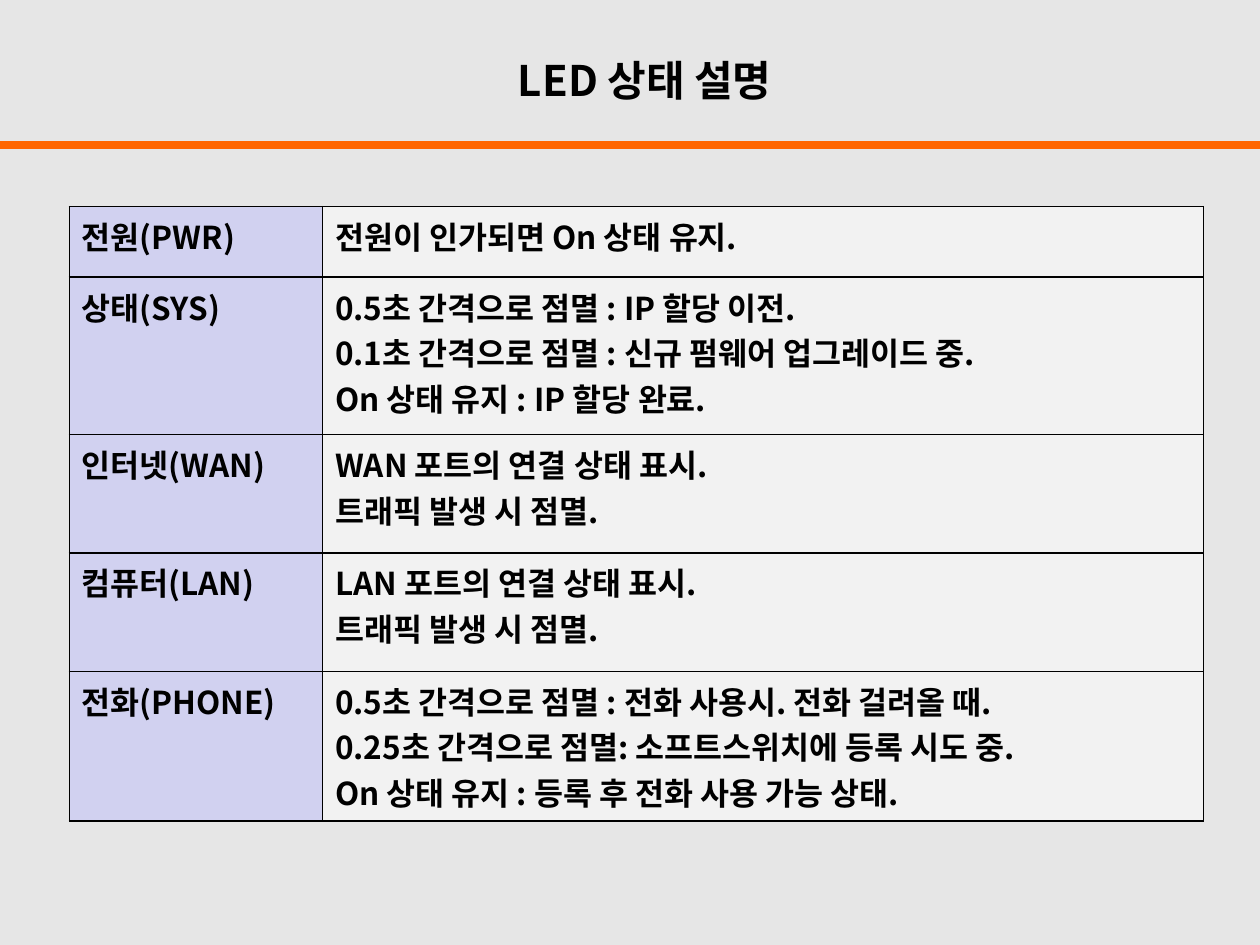
import dataclasses

import pptx
import pptx.dml.color
import pptx.enum.shapes
import pptx.enum.text
import pptx.oxml
import pptx.oxml.ns
import pptx.util

Inches = pptx.util.Inches
Pt = pptx.util.Pt


@dataclasses.dataclass(frozen=True)
class Theme:
    font: str = "Noto Sans CJK KR"
    background: str = "E6E6E6"
    accent: str = "FF6600"
    text: str = "000000"
    label_fill: str = "D1D1F0"
    detail_fill: str = "F2F2F2"
    border: str = "000000"
    title_size: float = 24
    body_size: float = 18
    rule_width: float = 4.5
    border_width: float = 1


@dataclasses.dataclass(frozen=True)
class LedState:
    label: str
    details: tuple[str, ...]
    height: float


THEME = Theme()
WIDTH, HEIGHT = 10, 7.5
COLUMNS = (2.01, 6.99)
STATES = (
    LedState("전원(PWR)", ("전원이 인가되면 On 상태 유지.",), 0.56),
    LedState("상태(SYS)", (
        "0.5초 간격으로 점멸 : IP 할당 이전.",
        "0.1초 간격으로 점멸 : 신규 펌웨어 업그레이드 중.",
        "On 상태 유지 : IP 할당 완료.",
    ), 1.25),
    LedState("인터넷(WAN)", ("WAN 포트의 연결 상태 표시.", "트래픽 발생 시 점멸."), 0.94),
    LedState("컴퓨터(LAN)", ("LAN 포트의 연결 상태 표시.", "트래픽 발생 시 점멸."), 0.94),
    LedState("전화(PHONE)", (
        "0.5초 간격으로 점멸 : 전화 사용시. 전화 걸려올 때.",
        "0.25초 간격으로 점멸: 소프트스위치에 등록 시도 중.",
        "On 상태 유지 : 등록 후 전화 사용 가능 상태.",
    ), 1.08),
)


def color(value: str) -> pptx.dml.color.RGBColor:
    return pptx.dml.color.RGBColor.from_string(value)


def write_text(text_frame, *lines: str, size: float = THEME.body_size,
               align=pptx.enum.text.PP_ALIGN.LEFT,
               anchor=pptx.enum.text.MSO_ANCHOR.TOP) -> None:
    text_frame.word_wrap = True
    text_frame.vertical_anchor = anchor
    for index, line in enumerate(lines):
        paragraph = text_frame.add_paragraph() if index else text_frame.paragraphs[0]
        paragraph.alignment = align
        paragraph.space_before = paragraph.space_after = Pt(0)
        run = paragraph.add_run()
        run.text = line
        run.font.name = THEME.font
        run.font.size = Pt(size)
        run.font.bold = True
        run.font.color.rgb = color(THEME.text)
        # The East Asian font carries the Korean letters
        east_asian = pptx.oxml.parse_xml(
            f'<a:ea {pptx.oxml.ns.nsdecls("a")} typeface="{THEME.font}"/>')
        run.font._element.find(pptx.oxml.ns.qn("a:latin")).addnext(east_asian)


def add_borders(cell) -> None:
    properties = cell._tc.get_or_add_tcPr()
    for index, side in enumerate(("lnL", "lnR", "lnT", "lnB")):
        properties.insert(index, pptx.oxml.parse_xml(
            f'<a:{side} {pptx.oxml.ns.nsdecls("a")} w="{Pt(THEME.border_width)}">'
            f'<a:solidFill><a:srgbClr val="{THEME.border}"/></a:solidFill></a:{side}>'))


def fill_cell(cell, *lines: str, fill: str) -> None:
    cell.fill.solid()
    cell.fill.fore_color.rgb = color(fill)
    write_text(cell.text_frame, *lines)
    add_borders(cell)


def add_title(slide, text: str) -> None:
    title = slide.shapes.title
    title.left, title.top = Inches(2.48), Inches(0.36)
    title.width, title.height = Inches(5.35), Inches(0.55)
    write_text(title.text_frame, text, size=THEME.title_size,
               align=pptx.enum.text.PP_ALIGN.CENTER,
               anchor=pptx.enum.text.MSO_ANCHOR.MIDDLE)


def add_rule(slide, top: float) -> None:
    rule = slide.shapes.add_connector(
        pptx.enum.shapes.MSO_CONNECTOR.STRAIGHT,
        0, Inches(top), Inches(WIDTH), Inches(top))
    rule.line.color.rgb = color(THEME.accent)
    rule.line.width = Pt(THEME.rule_width)
    rule._element.spPr.append(
        pptx.oxml.parse_xml(f'<a:effectLst {pptx.oxml.ns.nsdecls("a")}/>'))


def add_state_table(slide, left: float, top: float) -> None:
    table = slide.shapes.add_table(
        len(STATES), len(COLUMNS), Inches(left), Inches(top), Inches(sum(COLUMNS)),
        Inches(sum(state.height for state in STATES))).table
    table.first_row = table.horz_banding = False
    for column, width in zip(table.columns, COLUMNS):
        column.width = Inches(width)
    for row, state in zip(table.rows, STATES):
        row.height = Inches(state.height)
        label_cell, detail_cell = row.cells
        fill_cell(label_cell, state.label, fill=THEME.label_fill)
        fill_cell(detail_cell, *state.details, fill=THEME.detail_fill)


def main() -> None:
    presentation = pptx.Presentation()
    presentation.slide_width = Inches(WIDTH)
    presentation.slide_height = Inches(HEIGHT)
    slide = presentation.slides.add_slide(
        presentation.slide_layouts.get_by_name("Title Only"))
    slide.background.fill.solid()
    slide.background.fill.fore_color.rgb = color(THEME.background)

    # Heading and its rule
    add_rule(slide, 1.15)
    add_title(slide, "LED 상태 설명 ")

    # LED states
    add_state_table(slide, 0.55, 1.64)
    presentation.save("out.pptx")


if __name__ == "__main__":
    main()
